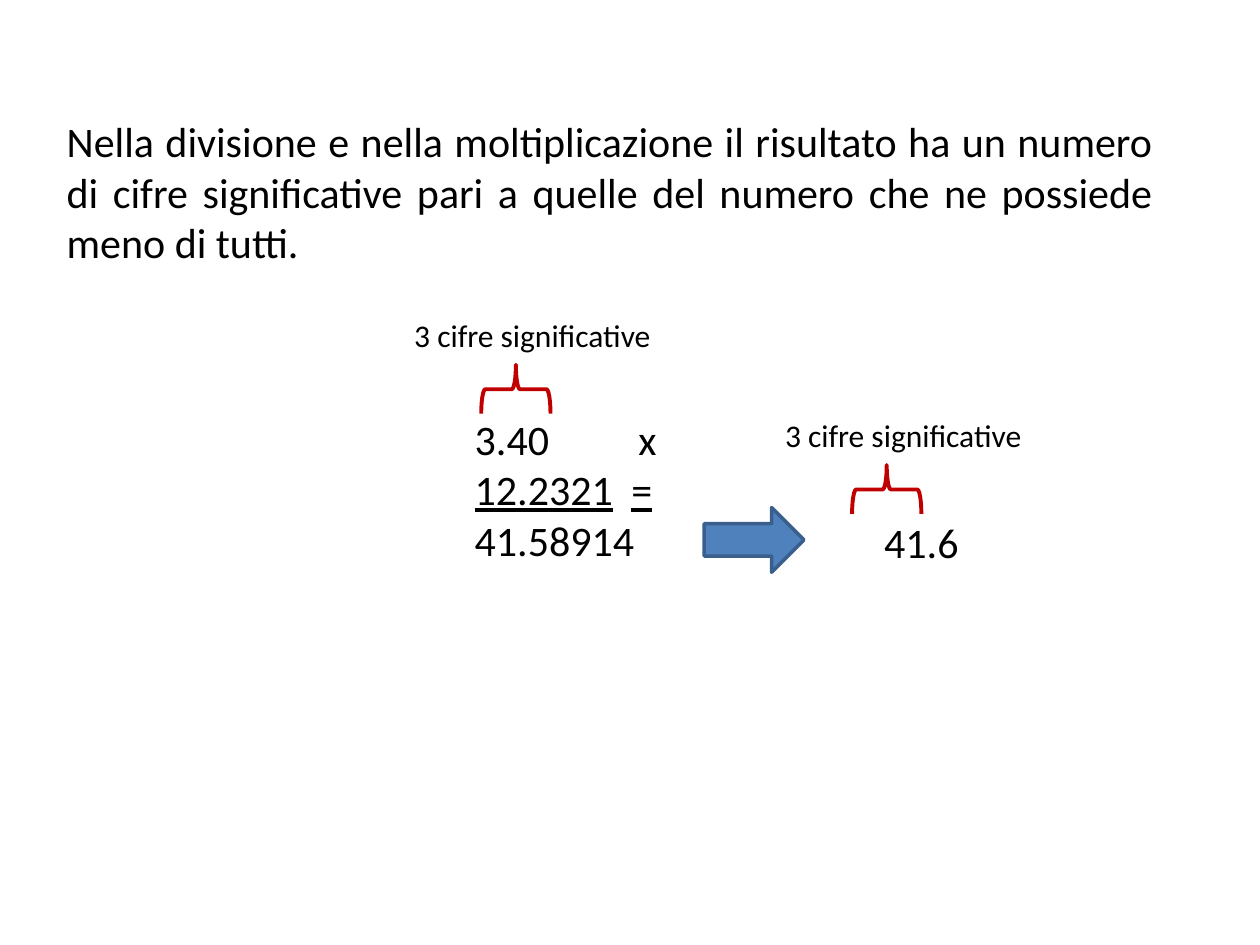
from dataclasses import dataclass
from lxml.etree import SubElement
from pptx import Presentation
from pptx.dml.color import RGBColor
from pptx.enum.shapes import MSO_SHAPE
from pptx.enum.text import MSO_AUTO_SIZE, PP_ALIGN
from pptx.oxml.ns import qn
from pptx.slide import Slide
from pptx.util import Pt


@dataclass(frozen=True)
class Theme:
    font: str = "Calibri"
    body: float = 24
    label: float = 18
    ink: RGBColor = RGBColor(0, 0, 0)
    red: RGBColor = RGBColor(0xC0, 0, 0)
    blue: RGBColor = RGBColor(0x4F, 0x81, 0xBD)
    edge: RGBColor = RGBColor(0x3A, 0x5F, 0x8C)


@dataclass(frozen=True)
class Run:
    text: str
    under: bool = False


@dataclass(frozen=True)
class Line:
    runs: tuple[Run, ...]
    tabs: tuple[float, ...] = ()


@dataclass(frozen=True)
class Box:
    left: float
    top: float
    width: float
    height: float

    def pts(self) -> tuple[Pt, ...]:
        return tuple(Pt(v) for v in (self.left, self.top, self.width, self.height))


THEME = Theme()


def add_text(slide: Slide, box: Box, lines: list[Line], size: float,
             align: PP_ALIGN = PP_ALIGN.JUSTIFY, wrap: bool = True) -> None:
    frame = slide.shapes.add_textbox(*box.pts()).text_frame
    frame.word_wrap = wrap
    frame.auto_size = MSO_AUTO_SIZE.SHAPE_TO_FIT_TEXT
    for i, line in enumerate(lines):
        para = frame.add_paragraph() if i else frame.paragraphs[0]
        para.alignment = align
        if line.tabs:
            stops = SubElement(para._p.get_or_add_pPr(), qn("a:tabLst"))
            for pos in line.tabs:
                SubElement(stops, qn("a:tab"), pos=str(Pt(pos)), algn="l")
        for part in line.runs:
            run = para.add_run()
            run.text = part.text
            font = run.font
            font.name, font.size = THEME.font, Pt(size)
            font.color.rgb = THEME.ink
            if part.under:
                font.underline = True


def add_mark(slide: Slide, left: float, top: float) -> None:
    """Label with the brace that opens downwards beneath it."""
    add_text(slide, Box(left, top, 170, 29), [Line((Run("3 cifre significative"),))],
             THEME.label, PP_ALIGN.LEFT)
    brace = slide.shapes.add_shape(MSO_SHAPE.RIGHT_BRACE,
                                   *Box(left + 51.2, top + 25.6, 28, 39.6).pts())
    brace.rotation = 270
    brace.shadow.inherit = False
    brace.fill.background()
    brace.line.color.rgb = THEME.red
    brace.line.width = Pt(2.25)


def add_arrow(slide: Slide, box: Box) -> None:
    arrow = slide.shapes.add_shape(MSO_SHAPE.RIGHT_ARROW, *box.pts())
    arrow.shadow.inherit = False
    arrow.fill.solid()
    arrow.fill.fore_color.rgb = THEME.blue
    arrow.line.color.rgb = THEME.edge
    arrow.line.width = Pt(2)


def main() -> None:
    prs = Presentation()
    prs.slide_width, prs.slide_height = Pt(720), Pt(540)
    slide = prs.slides.add_slide(prs.slide_layouts[6])

    # Rule
    rule = ("Nella divisione e nella moltiplicazione il risultato ha un numero "
            "di cifre significative pari a quelle del numero che ne possiede "
            "meno di tutti.")
    add_text(slide, Box(31, 62.6, 635, 94.3), [Line((Run(rule),))], THEME.body)

    # Product, with tab stops for the numbers and the signs
    start = 216
    add_text(slide, Box(48.2, 232.6, 487.4, 94.3), [
        Line((Run("\t3.40\tx"),), (start, 309.5)),
        Line((Run("\t"), Run("12.2321\t=", True)), (start, 305.5)),
        Line((Run("\t41.58914"),), (start,)),
    ], THEME.body)
    add_mark(slide, 229.6, 177)

    # Rounded result
    add_arrow(slide, Box(402.4, 290, 57, 37))
    add_text(slide, Box(498.2, 291.6, 57.6, 36), [Line((Run("41.6"),))],
             THEME.body, wrap=False)
    add_mark(slide, 441.5, 234.3)

    prs.save("out.pptx")


if __name__ == "__main__":
    main()
